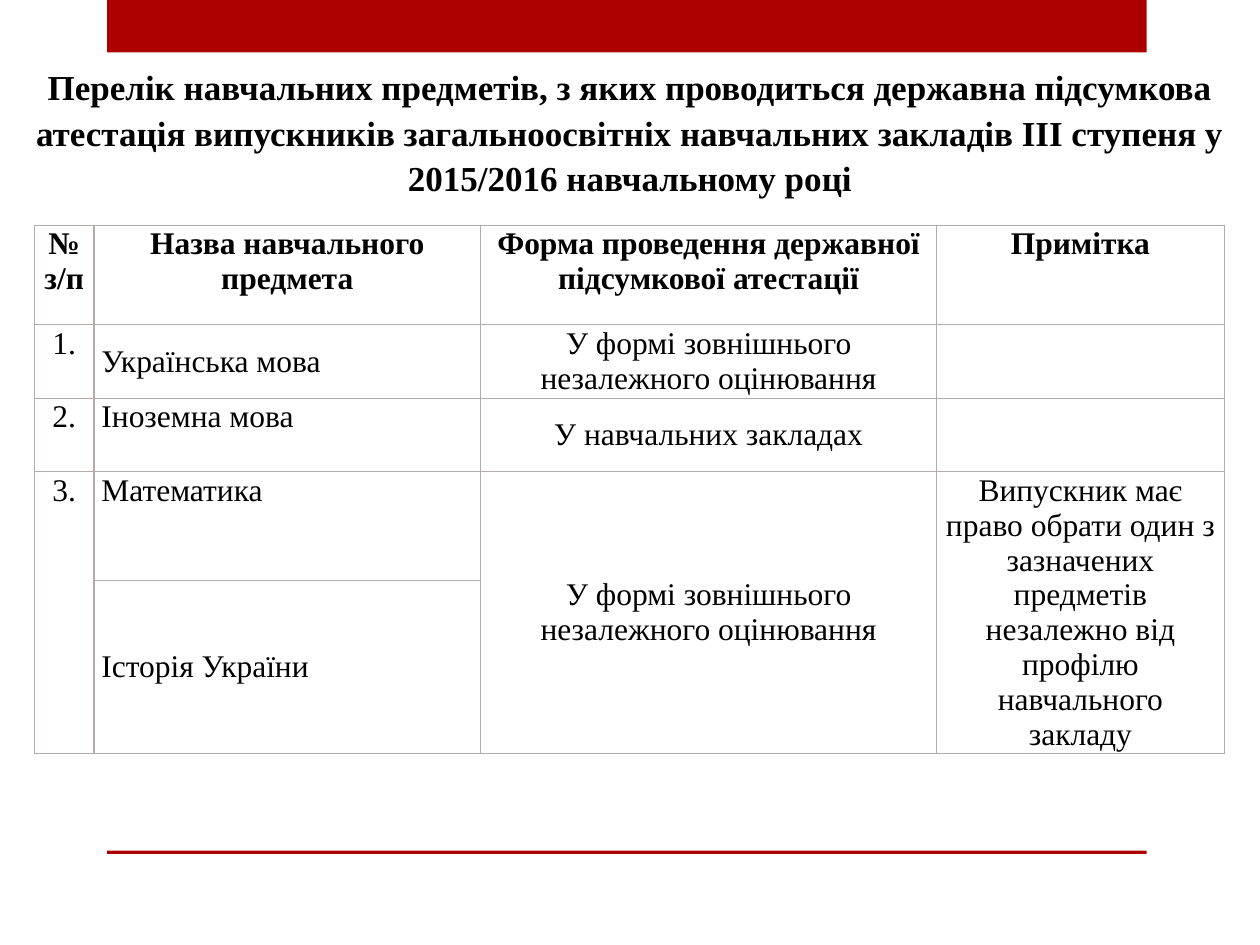
"""Build the slide listing school subjects for the state final attestation."""
import lxml.etree
import pptx
import pptx.dml.color
import pptx.enum.shapes
import pptx.enum.text
import pptx.oxml.ns
import pptx.util

Pt = pptx.util.Pt
RGBColor = pptx.dml.color.RGBColor
Align = pptx.enum.text.PP_ALIGN
Anchor = pptx.enum.text.MSO_ANCHOR

RED = RGBColor(0xAD, 0x01, 0x01)
GREY = RGBColor(0xB4, 0xAA, 0xAA)
WHITE = RGBColor(0xFF, 0xFF, 0xFF)
BLACK = RGBColor(0, 0, 0)

TITLE = ("Перелік навчальних предметів, з яких проводиться державна підсумкова "
         "атестація випускників загальноосвітніх навчальних закладів III ступеня "
         "у 2015/2016 навчальному році")
EXTERNAL = "У формі зовнішнього незалежного оцінювання"
CHOICE = ("Випускник має право обрати один з зазначених предметів незалежно "
          "від профілю навчального закладу")
ROWS = [
    ["№ з/п", "Назва навчального предмета",
     "Форма проведення державної підсумкової атестації", "Примітка"],
    ["1.", "Українська мова", EXTERNAL, ""],
    ["2.", "Іноземна мова", "У навчальних закладах", ""],
    ["3.", "Математика", EXTERNAL, CHOICE],
    ["", "Історія України", "", ""],
]
COLUMN_WIDTHS = [34, 221, 260.5, 164.5]
ROW_HEIGHTS = [57, 42, 42, 62, 99]
SUBJECT_COLUMN = 1
MERGED_COLUMNS = (0, 2, 3)
TOP_SUBJECTS = ("Іноземна мова", "Математика")

TITLE_FRAME = {"margin_left": 0, "margin_top": Pt(8.6), "margin_right": 0,
               "margin_bottom": 0, "word_wrap": True,
               "vertical_anchor": Anchor.MIDDLE,
               "auto_size": pptx.enum.text.MSO_AUTO_SIZE.NONE}
CELL_MARGINS = {"margin_left": Pt(4.3), "margin_top": Pt(0.7),
                "margin_right": Pt(4.3), "margin_bottom": Pt(0.7)}


def apply_format(target, values):
    """Set every attribute named in values on target."""
    for name, value in values.items():
        setattr(target, name, value)


def write_text(frame, text, size, bold, align, spacing=1.0):
    """Fill a text frame with one formatted paragraph."""
    para = frame.paragraphs[0]
    apply_format(para, {"alignment": align, "line_spacing": spacing})
    span = para.add_run()
    span.text = text
    apply_format(span.font, {"name": "Times New Roman", "size": Pt(size), "bold": bold})
    span.font.color.rgb = BLACK


def add_bar(page, top, height):
    """Add a red horizontal bar."""
    bar = page.shapes.add_shape(pptx.enum.shapes.MSO_SHAPE.RECTANGLE,
                                Pt(61.2), Pt(top), Pt(594), Pt(height))
    bar.shadow.inherit = False
    bar.fill.solid()
    bar.fill.fore_color.rgb = RED
    bar.line.fill.background()


def add_title(page):
    """Place and format the title placeholder."""
    title = page.shapes.title
    apply_format(title, {"left": Pt(8.6), "top": Pt(29.5),
                         "width": Pt(702.7), "height": Pt(81.4)})
    apply_format(title.text_frame, TITLE_FRAME)
    write_text(title.text_frame, TITLE, 20, True, Align.CENTER, 1.08)


def add_borders(cell):
    """Draw a thin grey line on all four sides of a cell."""
    qn = pptx.oxml.ns.qn
    properties = cell._tc.get_or_add_tcPr()
    for position, side in enumerate(("a:lnL", "a:lnR", "a:lnT", "a:lnB")):
        line = lxml.etree.Element(qn(side), w=str(Pt(0.75)))
        fill = lxml.etree.SubElement(line, qn("a:solidFill"))
        lxml.etree.SubElement(fill, qn("a:srgbClr"), val=str(GREY))
        properties.insert(position, line)


def format_cell(cell, text, row, column):
    """Write and style one table cell."""
    is_header = row == 0
    is_subject = column == SUBJECT_COLUMN and not is_header
    at_top = is_header or column == 0 or text in TOP_SUBJECTS
    apply_format(cell, CELL_MARGINS)
    cell.vertical_anchor = Anchor.TOP if at_top else Anchor.MIDDLE
    cell.fill.solid()
    cell.fill.fore_color.rgb = WHITE
    add_borders(cell)
    if text:
        write_text(cell.text_frame, text, 18, is_header,
                   Align.LEFT if is_subject else Align.CENTER)


def add_subject_table(page):
    """Add the table of subjects and attestation forms."""
    table = page.shapes.add_table(len(ROWS), len(COLUMN_WIDTHS), Pt(19.7), Pt(128.7),
                                  Pt(sum(COLUMN_WIDTHS)), Pt(sum(ROW_HEIGHTS))).table
    apply_format(table, {"first_row": False, "horz_banding": False})
    for column, width in zip(table.columns, COLUMN_WIDTHS):
        column.width = Pt(width)
    for row, height in zip(table.rows, ROW_HEIGHTS):
        row.height = Pt(height)
    for row, texts in enumerate(ROWS):
        for column, text in enumerate(texts):
            format_cell(table.cell(row, column), text, row, column)
    for column in MERGED_COLUMNS:
        table.cell(3, column).merge(table.cell(4, column))


def main():
    """Assemble and save the deck."""
    deck = pptx.Presentation()
    apply_format(deck, {"slide_width": Pt(720), "slide_height": Pt(540)})
    page = deck.slides.add_slide(deck.slide_layouts.get_by_name("Title Only"))
    add_bar(page, 0, 30)
    add_bar(page, 486, 2)
    add_subject_table(page)
    add_title(page)
    deck.save("out.pptx")


if __name__ == "__main__":
    main()
